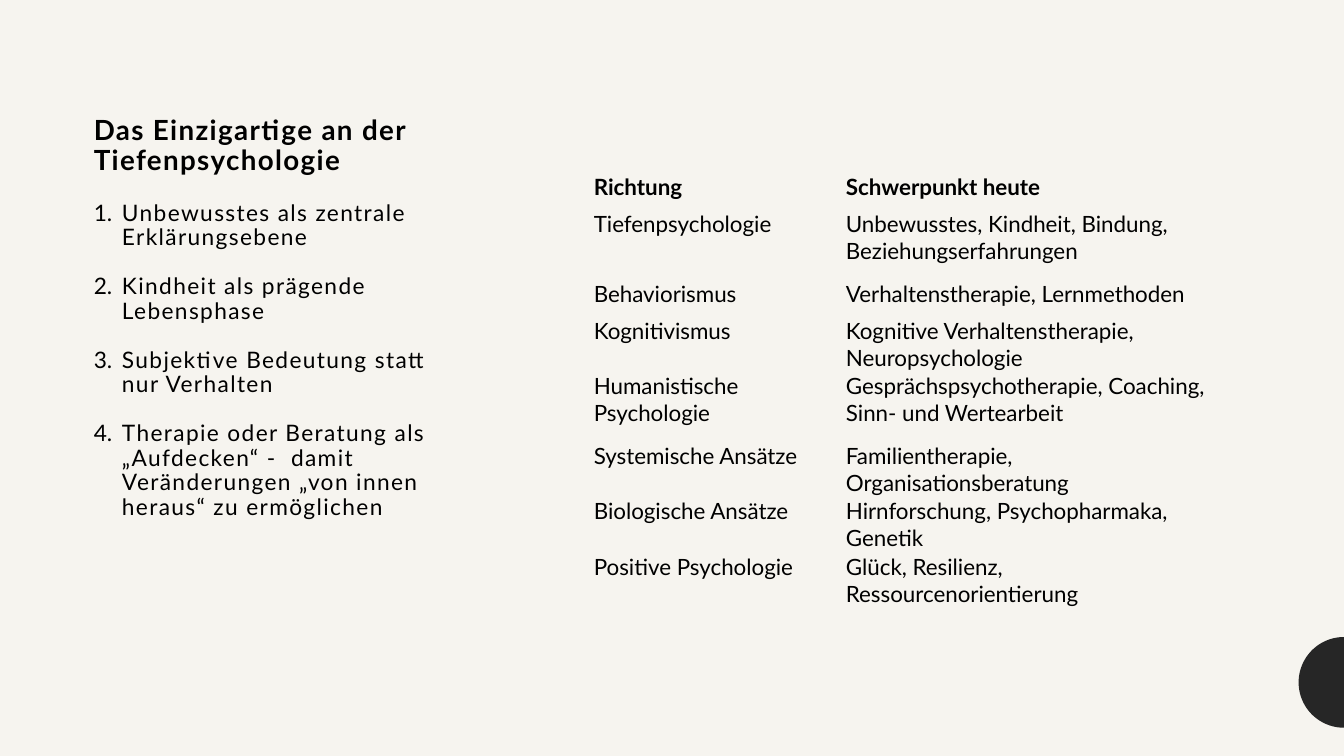
import math
import pptx
import pptx.dml.color
import pptx.enum.text
import pptx.oxml.ns
import pptx.util
from lxml import etree

Inches = pptx.util.Inches
Pt = pptx.util.Pt
BLACK = pptx.dml.color.RGBColor(0x00, 0x00, 0x00)
DARK = pptx.dml.color.RGBColor(0x26, 0x26, 0x26)
CREAM = pptx.dml.color.RGBColor(0xF6, 0xF4, 0xEF)
PLAIN = "{2D5ABB26-0587-4C30-8999-92F81FD0307C}"

TITLE = "Das Einzigartige an der Tiefenpsychologie"
POINTS = [
    "Unbewusstes als zentrale\vErklärungsebene",
    "Kindheit als prägende\vLebensphase",
    "Subjektive Bedeutung statt\vnur Verhalten",
    "Therapie oder Beratung als\v„Aufdecken“ -  damit\vVeränderungen „von innen\vheraus“ zu ermöglichen",
]
ROWS = [
    ("Richtung", "Schwerpunkt heute", 0.37),
    ("Tiefenpsychologie", "Unbewusstes, Kindheit, Bindung, Beziehungserfahrungen", 0.69),
    ("Behaviorismus", "Verhaltenstherapie, Lernmethoden", 0.37),
    ("Kognitivismus", "Kognitive Verhaltenstherapie, Neuropsychologie", 0.37),
    ("Humanistische Psychologie", "Gesprächspsychotherapie, Coaching, Sinn- und Wertearbeit", 0.69),
    ("Systemische Ansätze", "Familientherapie, Organisationsberatung", 0.37),
    ("Biologische Ansätze", "Hirnforschung, Psychopharmaka, Genetik", 0.37),
    ("Positive Psychologie", "Glück, Resilienz, Ressourcenorientierung", 0.37),
]


def write(frame, lines, size=16, bold=False, track=0, line=None, after=0, hang=None):
    for i, text in enumerate(lines):
        para = frame.paragraphs[0] if i == 0 else frame.add_paragraph()
        para.text = text
        para.alignment = pptx.enum.text.PP_ALIGN.LEFT
        para.space_before = Pt(0)
        para.space_after = Pt(after)
        if line:
            para.line_spacing = line
        for run in para.runs:
            run.font.name = "Lato"
            run.font.size = Pt(size)
            run.font.bold = bold
            run.font.color.rgb = BLACK
            if track:
                run._r.get_or_add_rPr().set("spc", str(track * 100))
        if hang:
            props = para._p.get_or_add_pPr()
            props.set("marL", str(Inches(hang)))
            props.set("indent", str(-Inches(hang)))
            mark = etree.SubElement(props, pptx.oxml.ns.qn("a:buAutoNum"))
            mark.set("type", "arabicPeriod")


class Board:
    """Hold the deck style and the current slide."""

    def __init__(self):
        self.deck = pptx.Presentation()
        self.deck.slide_width = Inches(13.33)
        self.deck.slide_height = Inches(7.5)
        self.slide = self.deck.slides.add_slide(self.deck.slide_layouts[1])
        fill = self.slide.background.fill
        fill.solid()
        fill.fore_color.rgb = CREAM

    def fit(self, holder, box, lines, **style):
        holder.left, holder.top, holder.width, holder.height = map(Inches, box)
        frame = holder.text_frame
        frame.margin_left = frame.margin_right = Inches(0.1)
        frame.margin_top = frame.margin_bottom = 0
        frame.word_wrap = True
        frame.auto_size = pptx.enum.text.MSO_AUTO_SIZE.NONE
        frame.vertical_anchor = pptx.enum.text.MSO_ANCHOR.TOP
        write(frame, lines, line=0.9, track=1, **style)

    def table(self, left, top, widths, rows):
        high = sum(row[-1] for row in rows)
        grid = self.slide.shapes.add_table(
            len(rows), len(widths), Inches(left), Inches(top),
            Inches(sum(widths)), Inches(high)).table
        grid.horz_banding = False
        grid._tbl.tblPr.find(pptx.oxml.ns.qn("a:tableStyleId")).text = PLAIN
        for col, width in zip(grid.columns, widths):
            col.width = Inches(width)
        for i, (*texts, height) in enumerate(rows):
            grid.rows[i].height = Inches(height)
            for j, text in enumerate(texts):
                cell = grid.cell(i, j)
                cell.fill.background()
                cell.margin_left = cell.margin_right = Inches(0.01)
                cell.margin_top = cell.margin_bottom = Inches(0.01)
                write(cell.text_frame, [text], bold=i == 0)

    def half(self, x, y, radius, steps=48):
        turns = [math.pi * (0.5 + k / steps) for k in range(steps + 1)]
        dots = [(Inches(x + radius * math.cos(t)), Inches(y + radius * math.sin(t)))
                for t in turns]
        path = self.slide.shapes.build_freeform(*dots[0])
        path.add_line_segments(dots[1:], close=True)
        shape = path.convert_to_shape()
        shape.shadow.inherit = False
        shape.fill.solid()
        shape.fill.fore_color.rgb = DARK
        shape.line.fill.background()


def main():
    board = Board()
    title, body = board.slide.placeholders
    board.half(13.33, 6.77, 0.45)
    board.fit(title, (0.83, 1.16, 4.19, 0.65), [TITLE], size=19.8, bold=True)
    board.fit(body, (0.83, 2, 4.19, 3.3), POINTS, size=16.2, after=17.5, hang=0.28)
    board.table(5.88, 1.71, (2.5, 3.91), ROWS)
    board.deck.save("out.pptx")


if __name__ == "__main__":
    main()
